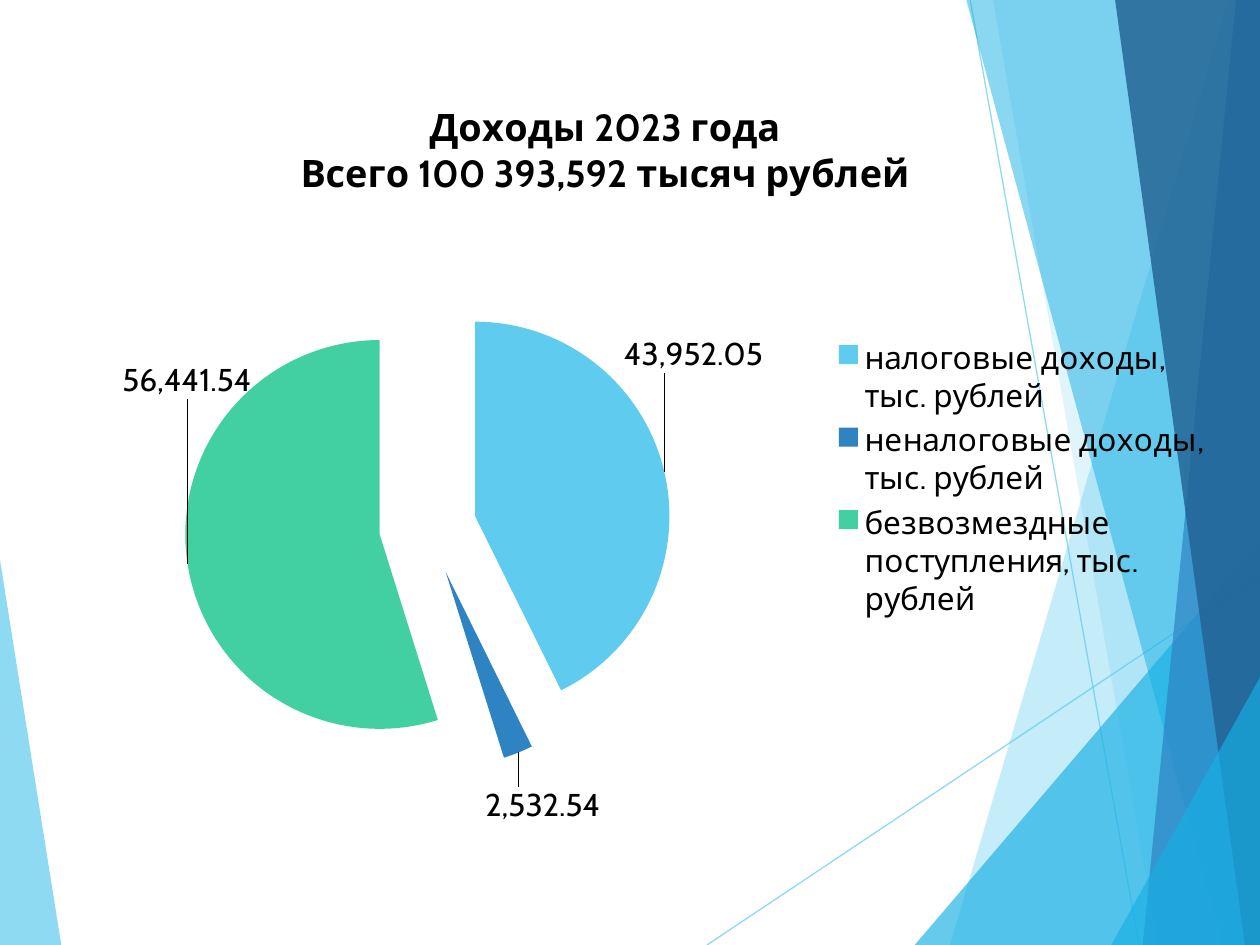
import pptx
import pptx.util
import pptx.chart.data
import pptx.dml.color
import pptx.enum.chart
import pptx.enum.shapes
import pptx.oxml
import pptx.oxml.ns
from lxml import etree

Pt = pptx.util.Pt
qn = pptx.oxml.ns.qn
FONT = "Cabin"
FORMAT = "#,##0.00"


def tint(fill, color, alpha=100):
    fill.solid()
    fill.fore_color.rgb = pptx.dml.color.RGBColor.from_string(color)
    if alpha < 100:
        node = fill._xPr.find(qn("a:solidFill"))[0]
        etree.SubElement(node, qn("a:alpha"), val=str(alpha * 1000))


def style(font, size=18, color="000000", bold=False):
    font.name = FONT
    font.size = Pt(size)
    font.bold = bold
    tint(font.fill, color)


def write(frame, text, **form):
    for i, line in enumerate(text.split("\n")):
        para = frame.add_paragraph() if i else frame.paragraphs[0]
        run = para.add_run()
        run.text = line
        style(run.font, **form)


def panel(slide, points, color, alpha):
    spots = [(Pt(x), Pt(y)) for x, y in points]
    build = slide.shapes.build_freeform(*spots[0], scale=1.0)
    build.add_line_segments(spots[1:], close=True)
    shape = build.convert_to_shape()
    shape.shadow.inherit = False
    shape.line.fill.background()
    tint(shape.fill, color, alpha)


def ray(slide, start, end, color, alpha):
    kind = pptx.enum.shapes.MSO_CONNECTOR.STRAIGHT
    line = slide.shapes.add_connector(
        kind, Pt(start[0]), Pt(start[1]), Pt(end[0]), Pt(end[1]))
    line.line.width = Pt(0.75)
    tint(line.line.fill, color, alpha)
    etree.SubElement(line._element.spPr, qn("a:effectLst"))


def backdrop(slide, x, y, w, h):
    right, low = x + w, y + h
    panel(slide, [(x, y + 320), (x + 35, low), (x, low)], "5FCBEF", 70)
    ray(slide, (x + 404, low), (right, y + 329), "5FCBEF", 70)
    ray(slide, (x + 554.4, y), (x + 650.9, low), "5FCBEF", 70)
    sheets = [
        (702, 0, 542.9, "5FCBEF", 36),
        (567.4, 0, 661.7, "5FCBEF", 20),
        (w, 308.9, 522.7, "17B0E4", 66),
        (552.2, 0, 698.4, "17B0E4", 50),
        (706.3, 0, 653, "2E83C3", 70),
        (637.2, 0, 711.4, "226292", 82),
        (w, 387, 635, "17B0E4", 66),
    ]
    for head, top, foot, color, alpha in sheets:
        panel(slide, [(x + head, y + top), (x + foot, low),
                      (right, low), (right, y + top)], color, alpha)


def layout(x, y, w=None, h=None, mode="edge", inner=False):
    root = etree.Element(qn("c:layout"))
    box = etree.SubElement(root, qn("c:manualLayout"))
    if inner:
        etree.SubElement(box, qn("c:layoutTarget"), val="inner")
    if mode:
        for key in ("xMode", "yMode"):
            etree.SubElement(box, qn("c:" + key), val=mode)
    for key, value in (("x", x), ("y", y), ("w", w), ("h", h)):
        if value is not None:
            etree.SubElement(box, qn("c:" + key), val=str(value))
    return root


def place(parent, node, after=None):
    for old in parent.findall(qn("c:layout")):
        parent.remove(old)
    if after is None:
        parent.insert(0, node)
    else:
        after.addnext(node)


def unwrap(node):
    node.find(qn("c:txPr")).find(qn("a:bodyPr")).set("wrap", "none")


def tag(point, dx, dy):
    label = point.data_label
    style(label.font)
    label.position = pptx.enum.chart.XL_LABEL_POSITION.OUTSIDE_END
    node = label._get_or_add_dLbl()
    unwrap(node)
    spot = layout(dx, dy, mode=None)
    place(node, spot, node.find(qn("c:idx")))
    spot.addnext(etree.Element(
        qn("c:numFmt"), formatCode=FORMAT, sourceLinked="0"))


def income(slide, x, y, w, h):
    data = pptx.chart.data.CategoryChartData(number_format=FORMAT)
    data.categories = [
        "налоговые доходы, тыс. рублей",
        "неналоговые доходы, тыс. рублей",
        "безвозмездные поступления, тыс. рублей",
    ]
    data.add_series("Series 1", (43952.05, 2532.54, 56441.54))
    chart = slide.shapes.add_chart(
        pptx.enum.chart.XL_CHART_TYPE.PIE,
        Pt(x), Pt(y), Pt(w), Pt(h), data).chart
    style(chart.font)

    chart.has_title = True
    title = chart.chart_title
    write(title.text_frame,
          "Доходы 2023 года\nВсего 100 393,592 тысяч рублей",
          size=21.6, bold=True)
    place(title._element, layout(0.22, 0.07), title._element.find(qn("c:tx")))
    title.include_in_layout = False

    chart.has_legend = True
    chart.legend.position = pptx.enum.chart.XL_LEGEND_POSITION.RIGHT
    chart.legend.include_in_layout = False
    style(chart.legend.font)

    plot = chart.plots[0]
    plot.vary_by_categories = True
    series = plot.series[0]
    labels = series.data_labels
    labels.show_value = True
    labels.number_format = FORMAT
    labels.number_format_is_linked = False
    labels.position = pptx.enum.chart.XL_LABEL_POSITION.OUTSIDE_END
    style(labels.font)
    unwrap(labels._element)

    parts = [
        ("5FCBEF", -0.04, -0.11),
        ("2E83C3", -0.03, 0.03),
        ("42D0A2", 0.06, -0.23),
    ]
    for i, (color, dx, dy) in enumerate(parts):
        point = series.points[i]
        tint(point.format.fill, color)
        tag(point, dx, dy)
    burst = etree.Element(qn("c:explosion"), val="25")
    series._element.find(qn("c:dPt")).addprevious(burst)

    area = chart._chartSpace.chart.plotArea
    place(area, layout(0.12, 0.28, 0.42, 0.55, inner=True))


def main():
    deck = pptx.Presentation()
    deck.slide_width, deck.slide_height = Pt(720), Pt(540)
    slide = deck.slides.add_slide(deck.slide_layouts[6])
    tint(slide.background.fill, "FFFFFF")
    backdrop(slide, 0, 0, 720, 540)
    income(slide, 20, 21, 680, 505)
    deck.save("out.pptx")


if __name__ == "__main__":
    main()
